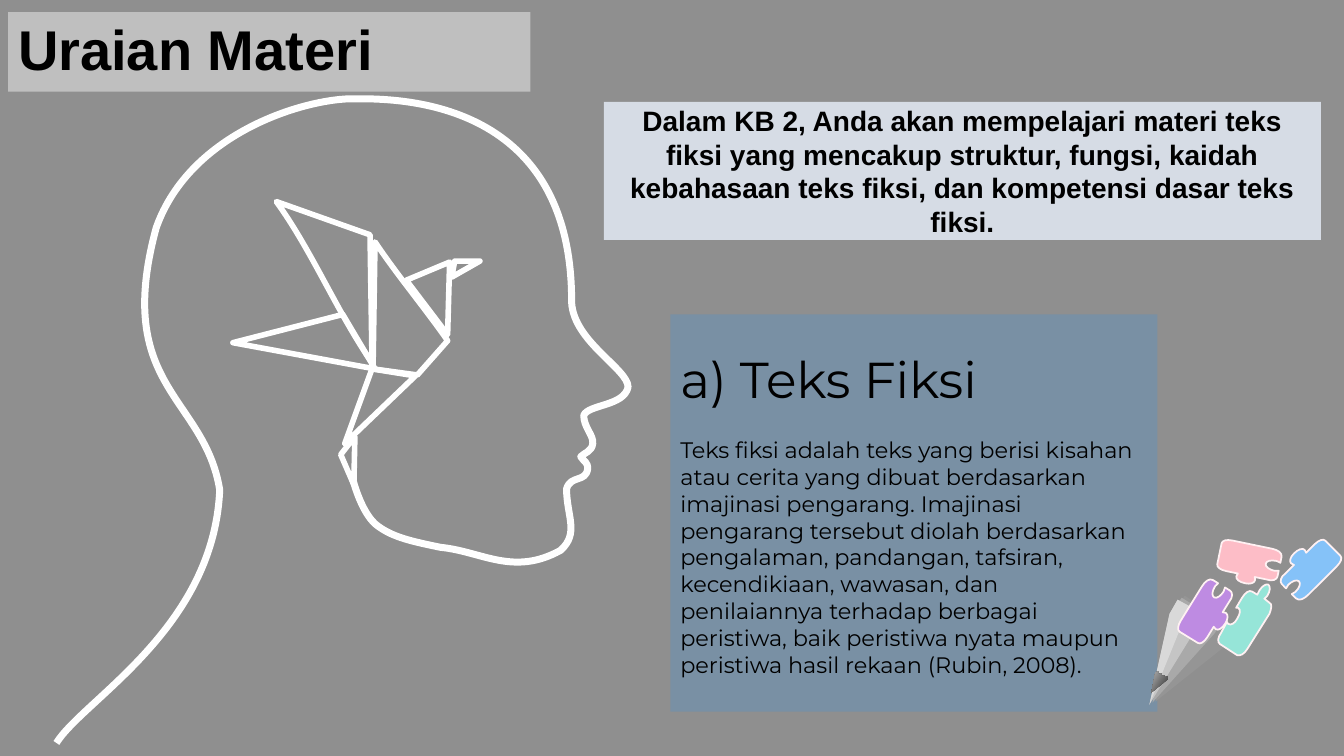
from pptx import Presentation
from pptx.dml.color import RGBColor
from pptx.enum.shapes import MSO_SHAPE as Shape
from pptx.enum.text import MSO_ANCHOR as Anchor, MSO_AUTO_SIZE as Fit, PP_ALIGN as Align
from pptx.oxml.ns import qn
from pptx.oxml.xmlchemy import OxmlElement as Node
from pptx.util import Inches, Pt

HUES = {
    "back": "8F8F8F", "title": "BFBFBF", "intro": "D6DCE5", "panel": "2B95F3",
    "text": "000000", "white": "FFFFFF", "edge": "FFF1F3",
    "purple": "BE8BE2", "blue": "85C2F8", "teal": "96E5D8", "pink": "FDBDC7",
    "wood1": "959595", "wood2": "A9A9A9", "wood3": "C5C5C5", "wood4": "D9D9D9",
    "dark": "474747", "light": "B0B0B0",
}

# Outlines in hundredths of an inch: a pair is a corner, six numbers are a curve
HEAD = [
    (300, 385), (300, 386, 309, 421, 325, 432), (340, 443, 358, 447, 387, 453),
    (428, 457, 459, 482, 506, 456), (525, 439, 512, 422, 512, 395),
    (516, 381, 531, 389, 533, 375), (533, 368, 529, 368, 526, 363),
    (530, 359, 537, 358, 538, 350), (539, 342, 529, 334, 529, 322),
    (534, 311, 569, 313, 573, 294), (573, 276, 519, 249, 517, 210),
    (518, 5, 340, 8, 302, 8), (256, 7, 139, 40, 105, 136),
    (62, 294, 153, 303, 168, 396), (162, 534, 33, 604, 6, 647),
]
BIRD = [
    [(122, 233), (121, 281), (108, 251)],
    [(112, 240), (139, 166), (182, 173)],
    [(221, 59), (246, 59), (218, 75)],
    [(173, 78), (216, 60), (214, 132)],
    [(1, 140), (110, 112), (142, 166)],
    [(184, 172), (214, 138), (191, 105, 164, 73, 142, 40), (140, 166)],
    [(137, 33), (44, 0), (79, 48, 105, 111, 139, 160)],
]
WOOD = {
    "wood1": [(45, 61), (97, 94), (89, 108), (16, 166), (36, 75)],
    "wood2": [(42, 63), (81, 87), (75, 98), (13, 167), (33, 77)],
    "wood3": [(38, 65), (65, 81), (58, 91), (10, 169), (30, 79)],
    "wood4": [(38, 65), (51, 72), (45, 83), (10, 169), (30, 79)],
}
TIP = [(19, 136), (19, 139), (22, 138), (22, 141), (25, 140), (25, 142),
       (28, 141), (28, 144), (12, 157), (16, 137)]
PIECE = [
    (10, 0), (50, 0), (56, 0, 61, 2, 61, 6), (61, 12), (57, 11),
    (51, 11, 47, 13, 47, 16), (47, 19, 52, 21, 57, 21), (61, 20),
    (61, 26), (61, 29, 57, 32, 51, 31), (39, 31), (40, 34),
    (40, 37, 36, 39, 31, 39), (25, 39, 21, 37, 21, 34), (22, 31),
    (10, 31), (4, 31, 0, 29, 0, 26), (0, 5), (0, 2, 4, 0, 10, 0),
]
LONG = [
    (97, 120), (80, 109), (77, 107, 78, 102, 81, 98), (87, 87), (88, 89),
    (91, 91, 95, 88, 97, 84), (100, 79, 101, 75, 98, 73), (96, 73), (102, 63),
    (105, 58, 109, 55, 112, 57), (117, 60), (119, 56),
    (122, 51, 126, 49, 128, 50), (130, 52, 130, 56, 127, 61),
    (124, 64), (129, 68), (132, 69, 131, 74, 129, 79),
    (107, 114), (104, 119, 100, 121, 97, 120),
]


def hue(name):
    return RGBColor.from_string(HUES[name])


def bend(form, steps):
    """Swap the straight segments of a freeform for its Bezier curves."""
    left = min(step[-2] for step in steps)
    top = min(step[-1] for step in steps)
    legs = list(form._element.iter(qn("a:lnTo")))
    for leg, step in zip(legs, steps[1:]):
        if len(step) == 2:
            continue
        curve = Node("a:cubicBezTo")
        for x, y in zip(step[::2], step[1::2]):
            dot = Node("a:pt")
            dot.set("x", str(x - left))
            dot.set("y", str(y - top))
            curve.append(dot)
        leg.getparent().replace(leg, curve)


def draw(slide, steps, left, top, fill=None, line=None, width=1, close=True, turn=0):
    dots = [step[-2:] for step in steps]
    pen = slide.shapes.build_freeform(*dots[0], scale=Inches(0.01))
    pen.add_line_segments(dots[1:], close=close)
    form = pen.convert_to_shape(Inches(left), Inches(top))
    bend(form, steps)
    form.shadow.inherit = False
    form.rotation = turn
    paint(form, fill)
    if line:
        form.line.color.rgb = hue(line)
        form.line.width = Pt(width)
    else:
        form.line.fill.background()
    return form


def paint(form, fill):
    if fill:
        form.fill.solid()
        form.fill.fore_color.rgb = hue(fill)
    else:
        form.fill.background()


def write(form, text, size, font="Arial", bold=False, align=Align.LEFT,
          before=0, space=1.0, first=True):
    frame = form.text_frame
    frame.word_wrap = True
    frame.auto_size = Fit.NONE
    frame.vertical_anchor = Anchor.MIDDLE
    para = frame.paragraphs[0] if first else frame.add_paragraph()
    para.alignment = align
    para.space_before = Pt(before)
    para.line_spacing = space
    run = para.add_run()
    run.text = text
    run.font.size = Pt(size)
    run.font.name = font
    run.font.bold = bold
    run.font.color.rgb = hue("text")


def block(slide, box, fill):
    form = slide.shapes.add_shape(Shape.RECTANGLE, *map(Inches, box))
    form.shadow.inherit = False
    paint(form, fill)
    form.line.fill.background()
    return form


def title(slide, box):
    form = slide.shapes.title
    form.left, form.top, form.width, form.height = map(Inches, box)
    paint(form, "title")
    write(form, "Uraian Materi", 40, bold=True, space=0.9)


def intro(slide, box):
    write(block(slide, box, "intro"),
          "Dalam KB 2, Anda akan mempelajari materi teks fiksi yang mencakup "
          "struktur, fungsi, kaidah kebahasaan teks fiksi, dan kompetensi dasar "
          "teks fiksi.", 20, bold=True, align=Align.CENTER)


def panel(slide, box):
    form = block(slide, box, "panel")
    alpha = Node("a:alpha")
    alpha.set("val", "22000")
    next(form._element.spPr.iter(qn("a:srgbClr"))).append(alpha)
    face = "Montserrat"
    write(form, "a) Teks Fiksi", 36, face)
    write(form, "Teks fiksi adalah teks yang berisi kisahan atau cerita yang dibuat "
          "berdasarkan imajinasi pengarang. Imajinasi pengarang tersebut diolah "
          "berdasarkan pengalaman, pandangan, tafsiran,", 16, face,
          before=19.5, first=False)
    write(form, "kecendikiaan, wawasan, dan penilaiannya terhadap berbagai peristiwa, "
          "baik peristiwa nyata maupun peristiwa hasil rekaan (Rubin, 2008).",
          16, face, first=False)


def mind(slide, left, top):
    # Paper bird inside the head
    for part in BIRD:
        draw(slide, part, left + 1.8, top + 1.1, line="white", width=4)
    draw(slide, HEAD, left, top, line="white", width=5, close=False)


def pencil(slide, left, top):
    # Sharpened wood and lead
    for name, part in WOOD.items():
        draw(slide, part, left, top, fill=name)
    tip = draw(slide, TIP, left, top)
    tip.fill.gradient()
    tip.fill.gradient_angle = 148
    for stop, name, place in zip(tip.fill.gradient_stops, ("dark", "light"), (0.15, 1)):
        stop.color.rgb = hue(name)
        stop.position = place
    # Jigsaw pieces
    edge = {"line": "edge", "width": 1.25}
    for name, x, y, turn in (("purple", 0.38, 0.59, 301.7), ("blue", 1.37, 0.13, 135.1),
                             ("pink", 0.78, 0.1, 11.7)):
        draw(slide, PIECE, left + x, top + y, fill=name, turn=turn, **edge)
    draw(slide, LONG, left, top, fill="teal", **edge)


def main():
    deck = Presentation()
    deck.slide_width, deck.slide_height = Inches(13.33), Inches(7.5)
    slide = deck.slides.add_slide(deck.slide_layouts[5])
    slide.background.fill.solid()
    slide.background.fill.fore_color.rgb = hue("back")
    mind(slide, 0.5, 0.9)
    title(slide, (0.08, 0.12, 5.18, 0.79))
    intro(slide, (5.99, 1.01, 7.11, 1.37))
    panel(slide, (6.65, 3.12, 4.83, 3.94))
    pencil(slide, 11.3, 5.3)
    deck.save("out.pptx")


if __name__ == "__main__":
    main()
